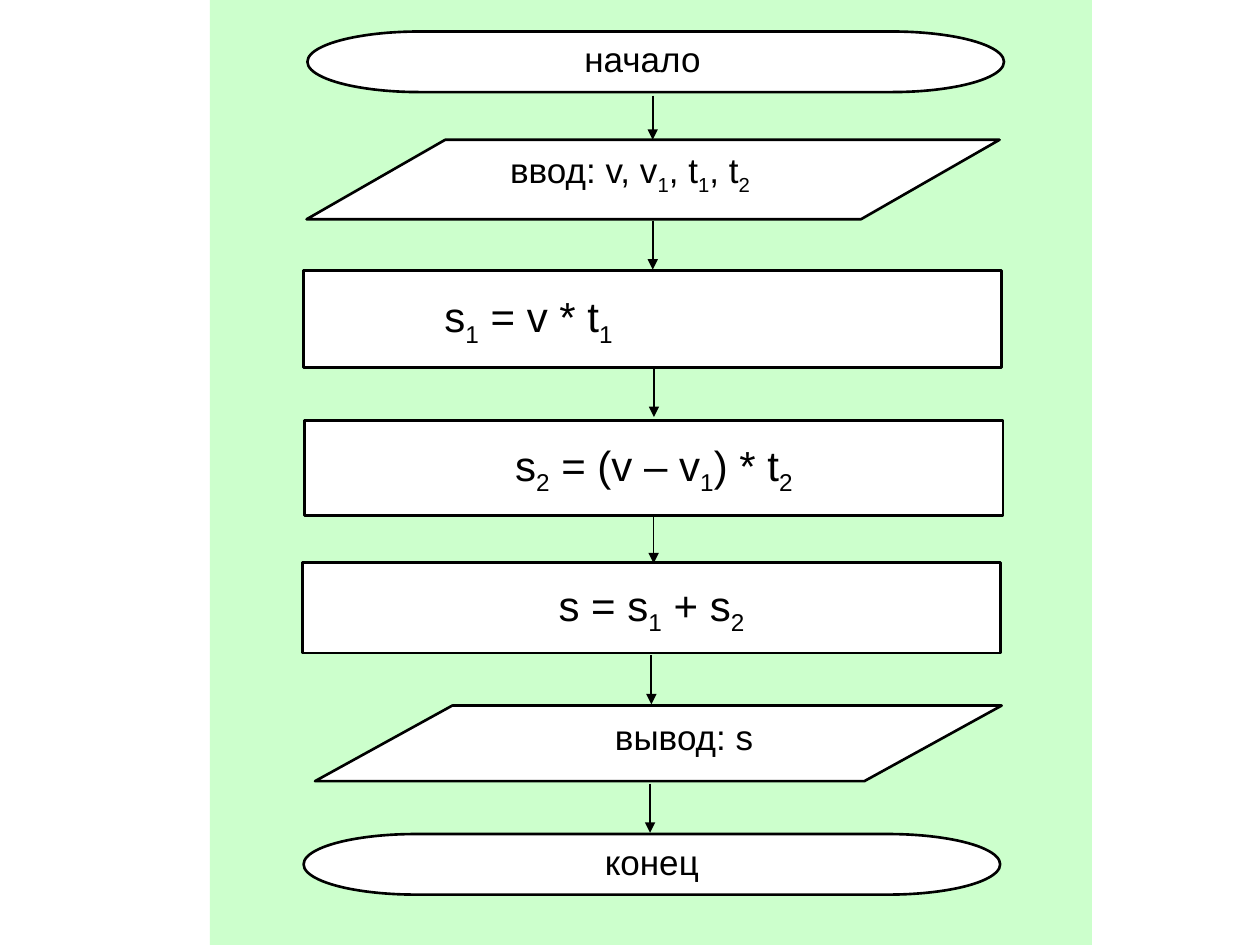
import pptx
import pptx.dml.color
import pptx.enum.shapes
import pptx.enum.text
import pptx.oxml
import pptx.oxml.ns
import pptx.util

Pt = pptx.util.Pt
SHAPE = pptx.enum.shapes.MSO_SHAPE
ALIGN = pptx.enum.text.PP_ALIGN
ANCHOR = pptx.enum.text.MSO_ANCHOR

BLACK = pptx.dml.color.RGBColor(0x00, 0x00, 0x00)
WHITE = pptx.dml.color.RGBColor(0xFF, 0xFF, 0xFF)
GREEN = pptx.dml.color.RGBColor(0xCC, 0xFF, 0xCC)

# Shape, its left, top, width, height, then label left, top, width, label pieces
LABELLED_STEPS = [
    (SHAPE.FLOWCHART_TERMINATOR, (175.7, 18, 398, 34.6), (219.6, 18, 295), ["начало"]),
    (SHAPE.FLOWCHART_DATA, (175.2, 79.9, 396, 45.4), (221, 81.4, 278),
     ["ввод: v, v", "1", ", t", "1", ", t", "2"]),
    (SHAPE.FLOWCHART_DATA, (180, 403.2, 392.4, 43.2), (238.3, 405.4, 305.3), ["вывод: s"]),
    (SHAPE.FLOWCHART_TERMINATOR, (173.5, 476.6, 398, 34.6), (262, 476.6, 221), ["конец"]),
]
# Shape, left, top, width, height, alignment, left inset, formula pieces
FORMULA_STEPS = [
    (SHAPE.RECTANGLE, (173.5, 154.6, 399, 55.6), ALIGN.LEFT, 80.5,
     ["s", "1", " = v * t", "1"]),
    (SHAPE.FLOWCHART_PROCESS, (174.2, 240.4, 399, 54), ALIGN.CENTER, 7.2,
     ["s", "2", " = (v – v", "1", ") * t", "2"]),
    (SHAPE.FLOWCHART_PROCESS, (172.8, 321.4, 399, 51.8), ALIGN.CENTER, 7.2,
     ["s = s", "1", " + s", "2"]),
]
# Arrow x, top, length
ARROWS = [
    (373, 54.7, 25.2), (373, 126, 28.1), (373.7, 210.2, 28.1),
    (373.5, 293.8, 28.1), (372.2, 374.4, 28.1), (371.5, 447.8, 28.1),
]


def add_block(page, kind, place, fill, outlined=True):
    block = page.shapes.add_shape(kind, *map(Pt, place))
    block.shadow.inherit = False
    block.fill.solid()
    block.fill.fore_color.rgb = fill
    if outlined:
        block.line.color.rgb = BLACK
        block.line.width = Pt(1.5)
    else:
        block.line.fill.background()
    return block


def write_text(box, pieces, size, alignment=ALIGN.CENTER):
    """Write pieces in turn: every second one is a subscript."""
    box.text_frame.word_wrap = True
    para = box.text_frame.paragraphs[0]
    para.alignment = alignment
    para.font.name = "Arial"
    para.font.size = Pt(size)
    para.font.color.rgb = BLACK
    for index, piece in enumerate(pieces):
        span = para.add_run()
        span.text = piece
        if index % 2:
            span._r.get_or_add_rPr().set("baseline", "-25000")


def add_label(page, place, pieces):
    box = page.shapes.add_textbox(*map(Pt, place), Pt(37.4))
    write_text(box, pieces, 20)


def add_arrow(page, x, top, length):
    arrow = page.shapes.add_connector(
        pptx.enum.shapes.MSO_CONNECTOR.STRAIGHT, Pt(x), Pt(top), Pt(x), Pt(top + length))
    arrow.line.color.rgb = BLACK
    arrow.line.width = Pt(1)
    line = arrow.line._get_or_add_ln()
    head = pptx.oxml.parse_xml(
        f'<a:tailEnd {pptx.oxml.ns.nsdecls("a")} type="triangle"/>')
    line.append(head)
    effects = pptx.oxml.parse_xml(f'<a:effectLst {pptx.oxml.ns.nsdecls("a")}/>')
    arrow._element.spPr.append(effects)


def main():
    deck = pptx.Presentation()
    deck.slide_width, deck.slide_height = Pt(720), Pt(540)
    page = deck.slides.add_slide(deck.slide_layouts[6])

    # Green panel behind the flowchart
    add_block(page, SHAPE.RECTANGLE, (120, 0, 504, 540), GREEN, outlined=False)

    # Start, input, output and end
    for kind, place, label_place, pieces in LABELLED_STEPS:
        add_block(page, kind, place, WHITE)
        add_label(page, label_place, pieces)

    # Calculations
    for kind, place, alignment, inset, pieces in FORMULA_STEPS:
        block = add_block(page, kind, place, WHITE)
        block.text_frame.margin_left = Pt(inset)
        block.text_frame.vertical_anchor = ANCHOR.MIDDLE
        write_text(block, pieces, 24, alignment)

    # Flow between the steps
    for x, top, length in ARROWS:
        add_arrow(page, x, top, length)

    deck.save("out.pptx")


if __name__ == "__main__":
    main()
